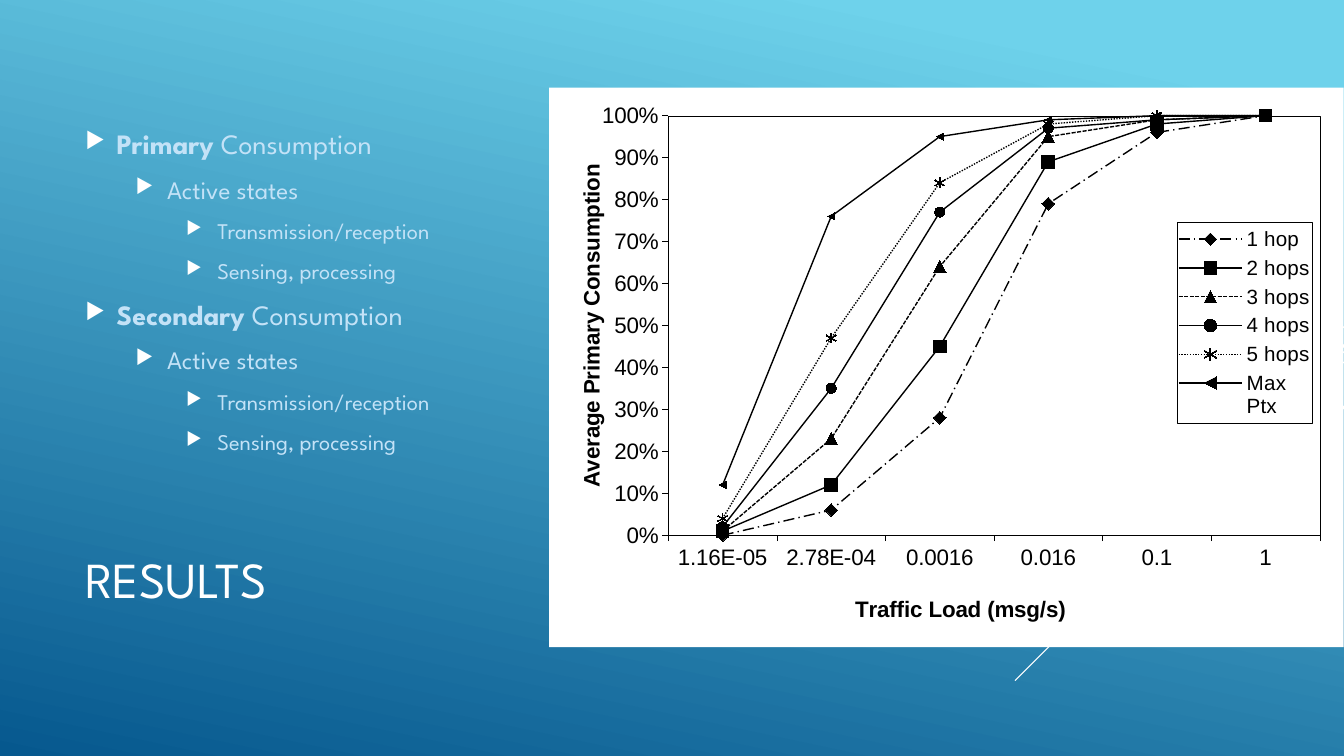
from pptx import Presentation
from pptx.chart.data import CategoryChartData
from pptx.dml.color import RGBColor
from pptx.enum.chart import XL_CHART_TYPE, XL_LEGEND_POSITION, XL_MARKER_STYLE, XL_TICK_MARK
from pptx.enum.dml import MSO_LINE
from pptx.enum.shapes import MSO_CONNECTOR
from pptx.enum.text import MSO_ANCHOR, PP_ALIGN
from pptx.oxml import parse_xml
from pptx.oxml.ns import nsdecls, qn
from pptx.util import Cm, Pt

WHITE = RGBColor(0xFF, 0xFF, 0xFF)
BLACK = RGBColor(0, 0, 0)
PALE_BLUE = RGBColor(0xC3, 0xE2, 0xF7)
SKY = RGBColor(0x6E, 0xD2, 0xEB)
DEEP_BLUE = RGBColor(0x06, 0x58, 0x8E)
FONT, CHART_FONT = "League Spartan", "Arial"

LINE_MARKERS = XL_CHART_TYPE.LINE_MARKERS
RIGHT = XL_LEGEND_POSITION.RIGHT
OUTSIDE, NO_TICK = XL_TICK_MARK.OUTSIDE, XL_TICK_MARK.NONE
SOLID, SYS_DASH, SYS_DOT = MSO_LINE.SOLID, MSO_LINE.SQUARE_DOT, MSO_LINE.ROUND_DOT
LONG_DASH_DOT = MSO_LINE.LONG_DASH_DOT
DIAMOND, SQUARE, TRIANGLE = XL_MARKER_STYLE.DIAMOND, XL_MARKER_STYLE.SQUARE, XL_MARKER_STYLE.TRIANGLE
CIRCLE, STAR = XL_MARKER_STYLE.CIRCLE, XL_MARKER_STYLE.STAR
STRAIGHT = MSO_CONNECTOR.STRAIGHT
MIDDLE, JUSTIFY = MSO_ANCHOR.MIDDLE, PP_ALIGN.JUSTIFY

# Diagonals: start y, end x, end y (cm), width (pt)
DIAGONALS = [(8.23, 31.32, 10.77, 0.75), (8.86, 25.58, 17.15, 0.75),
             (9.12, 28.6, 14.4, 0.75), (8.69, 29.01, 13.54, 2.25),
             (10.24, 30.33, 13.77, 2.25)]

# Bullets: level, bold part, plain part
DETAILS = [(1, "", "Active states"), (2, "", "Transmission/reception"),
           (2, "", "Sensing, processing")]
BULLETS = [(0, "Primary", " Consumption"), *DETAILS,
           (0, "Secondary", " Consumption"), *DETAILS]

LOADS = ["1.16E-05", "2.78E-04", "0.0016", "0.016", "0.1", "1"]
# Series: name, values, dash, marker, marker size
SERIES = [
    ("1 hop", (0, 0.06, 0.28, 0.79, 0.96, 1), LONG_DASH_DOT, DIAMOND, 9),
    ("2 hops", (0.01, 0.12, 0.45, 0.89, 0.98, 1), SOLID, SQUARE, 9),
    ("3 hops", (0.01, 0.23, 0.64, 0.95, 0.99, 1), SYS_DASH, TRIANGLE, 9),
    ("4 hops", (0.02, 0.35, 0.77, 0.97, 0.99, 1), SOLID, CIRCLE, 7),
    ("5 hops", (0.04, 0.47, 0.84, 0.98, 1, 1), SYS_DOT, STAR, 7),
    ("Max Ptx", (0.12, 0.76, 0.95, 0.99, 1, 1), SOLID, None, 5),
]


def set_background(s):
    fill = s.background.fill
    fill.gradient()
    fill.gradient_angle = 258
    for stop, color, position in zip(fill.gradient_stops, (SKY, DEEP_BLUE), (0.1, 1)):
        stop.color.rgb = color
        stop.position = position


def add_diagonal(s, y1, x2, y2, width):
    line = s.shapes.add_connector(STRAIGHT, Cm(33.87), Cm(y1), Cm(x2), Cm(y2))
    line.line.color.rgb = WHITE
    line.line.width = Pt(width)
    line._element.spPr.append(parse_xml(f"<a:effectLst {nsdecls('a')}/>"))


def add_frame(s, x, y, w, h):
    tf = s.shapes.add_textbox(Cm(x), Cm(y), Cm(w), Cm(h)).text_frame
    tf.word_wrap = True
    tf.vertical_anchor = MIDDLE
    return tf


def add_run(p, text, size=16, color=WHITE, bold=False, font=FONT):
    r = p.add_run()
    r.text = text
    r.font.name = font
    r.font.size = Pt(size)
    r.font.bold = bold
    r.font.color.rgb = color


def add_bullet(p, level, bold_text, text):
    size = 20 - 2 * level
    p.level = level
    p.alignment = JUSTIFY
    p.space_before = Pt(0.2 * size)
    p.space_after = Pt(6)
    pPr = p._p.get_or_add_pPr()
    pPr.set("marL", str(Cm(0.79 + 1.27 * level)))
    pPr.set("indent", str(-Cm(0.79)))
    for xml in (f'<a:buClr {nsdecls("a")}><a:srgbClr val="{WHITE}"/></a:buClr>',
                f'<a:buSzPct {nsdecls("a")} val="80000"/>',
                f'<a:buChar {nsdecls("a")} char="▶"/>'):
        pPr.append(parse_xml(xml))
    if bold_text:
        add_run(p, bold_text, size=size, color=PALE_BLUE, bold=True)
    add_run(p, text, size=size, color=PALE_BLUE)


def place(element, index, x, y, w=None, h=None, inner=False):
    """Give a chart part a fixed place, in fractions of the chart."""
    for old in element.findall(qn("c:layout")):
        element.remove(old)
    target = '<c:layoutTarget val="inner"/>' if inner else ""
    modes = '<c:xMode val="edge"/><c:yMode val="edge"/>'
    values = "".join(f'<c:{k} val="{v}"/>' for k, v in zip("xywh", (x, y, w, h)) if v is not None)
    element.insert(index, parse_xml(
        f'<c:layout {nsdecls("c")}><c:manualLayout>{target}{modes}{values}'
        "</c:manualLayout></c:layout>"))


def white_area(border=True):
    line = f'<a:solidFill><a:srgbClr val="{BLACK}"/></a:solidFill>' if border else "<a:noFill/>"
    return parse_xml(
        f'<c:spPr {nsdecls("c", "a")}><a:solidFill><a:srgbClr val="{WHITE}"/></a:solidFill>'
        f'<a:ln w="3175">{line}</a:ln></c:spPr>')


def set_font(font, size):
    font.name = CHART_FONT
    font.size = Pt(size)
    font.color.rgb = BLACK


def format_axis(axis, title, x, y):
    axis.has_major_gridlines = False
    axis.major_tick_mark, axis.minor_tick_mark = OUTSIDE, NO_TICK
    axis.format.line.color.rgb = BLACK
    axis.format.line.width = Pt(0.25)
    set_font(axis.tick_labels.font, 16)
    p = axis.axis_title.text_frame.paragraphs[0]
    add_run(p, title, color=BLACK, bold=True, font=CHART_FONT)
    place(axis.axis_title._element, 1, x, y)


def format_series(series, dash, marker, size):
    series.smooth = False
    series.format.line.color.rgb = BLACK
    series.format.line.width = Pt(1)
    series.format.line.dash_style = dash
    if marker is not None:
        series.marker.style = marker
    series.marker.size = size
    series.marker.format.fill.solid()
    series.marker.format.fill.fore_color.rgb = BLACK
    series.marker.format.line.color.rgb = BLACK


def add_consumption_chart(s):
    data = CategoryChartData(number_format="0%")
    data.categories = LOADS
    for name, values, *_ in SERIES:
        data.add_series(name, values)
    chart = s.shapes.add_chart(LINE_MARKERS, Cm(13.84), Cm(2.21), Cm(20.02), Cm(14.1), data).chart
    chart.has_title = False
    set_font(chart.font, 8)
    chart.plots[0].vary_by_categories = False
    for series, (_, _, *style) in zip(chart.plots[0].series, SERIES):
        format_series(series, *style)

    # Axes
    format_axis(chart.category_axis, "Traffic Load (msg/s)", 0.38, 0.9)
    format_axis(chart.value_axis, "Average Primary Consumption", 0.03, 0.13)
    chart.value_axis.minimum_scale, chart.value_axis.maximum_scale = 0, 1
    chart.value_axis.major_unit = 0.1
    chart.value_axis.tick_labels.number_format = "0%"
    chart.value_axis.tick_labels.number_format_is_linked = False

    # Legend
    chart.has_legend = True
    legend = chart.legend
    legend.position = RIGHT
    legend.include_in_layout = False
    set_font(legend.font, 14.7)
    place(legend._element, 1, 0.79, 0.24, 0.17, 0.36)
    legend._element.find(qn("c:txPr")).addprevious(white_area())

    # Plot and chart areas
    chart_part = chart._chartSpace.chart
    place(chart_part.plotArea, 0, 0.15, 0.05, 0.82, 0.75, inner=True)
    chart_part.plotArea.append(white_area())
    chart_part.addnext(white_area(border=False))


def main():
    prs = Presentation()
    prs.slide_width, prs.slide_height = Cm(33.87), Cm(19.05)
    s = prs.slides.add_slide(prs.slide_layouts[6])
    set_background(s)
    for diagonal in DIAGONALS:
        add_diagonal(s, *diagonal)

    # Title and bullets
    add_run(add_frame(s, 1.9, 12.47, 23.7, 4.19).paragraphs[0], "RESULTS", size=36)
    tf = add_frame(s, 1.9, 2.79, 22.3, 9.07)
    for i, bullet in enumerate(BULLETS):
        add_bullet(tf.add_paragraph() if i else tf.paragraphs[0], *bullet)

    add_consumption_chart(s)
    prs.save("out.pptx")


if __name__ == "__main__":
    main()
